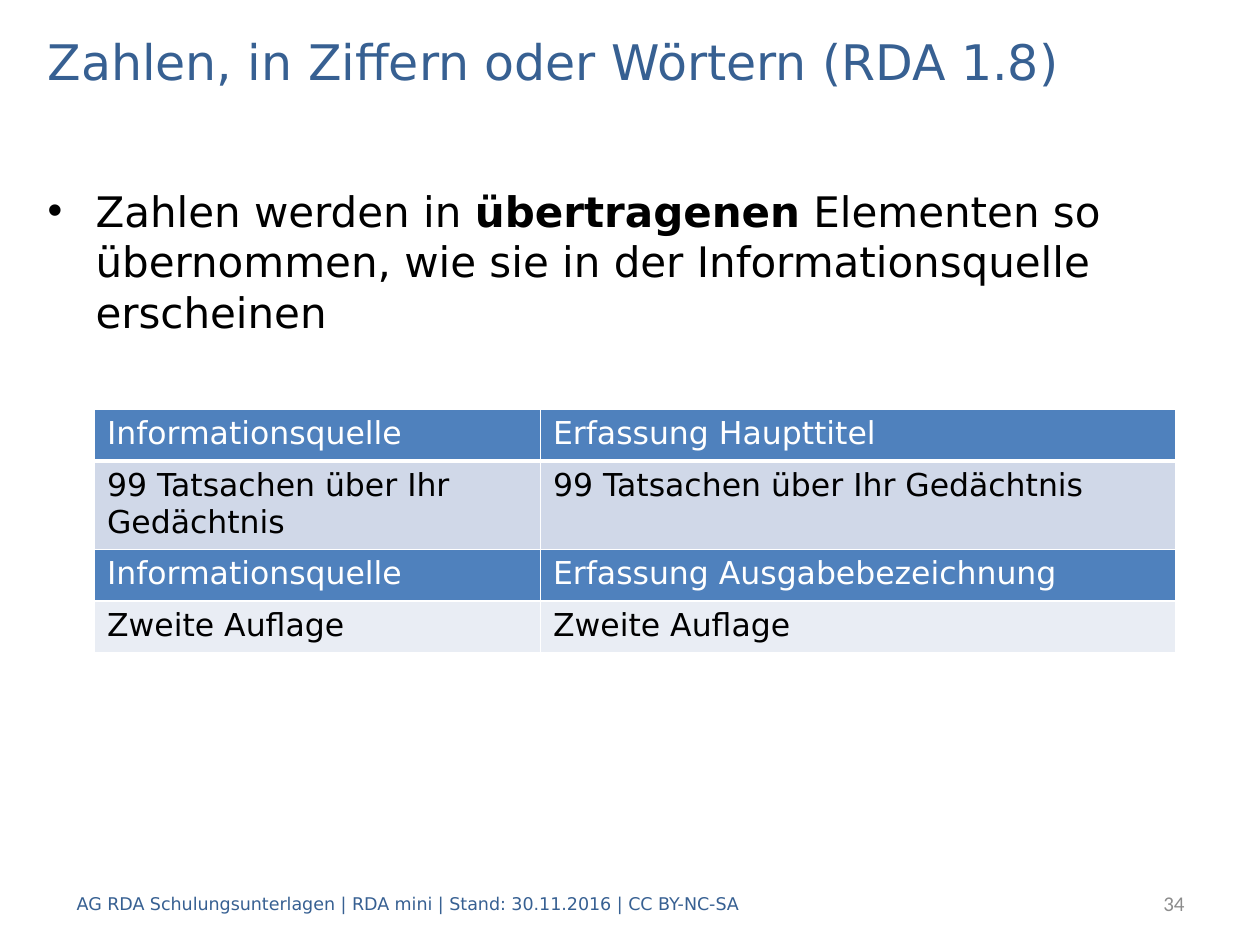
from dataclasses import dataclass

from lxml import etree
from pptx import Presentation
from pptx.dml.color import RGBColor
from pptx.enum.text import MSO_ANCHOR, PP_ALIGN
from pptx.oxml.ns import qn
from pptx.util import Inches, Pt

LEFT, RIGHT = PP_ALIGN.LEFT, PP_ALIGN.RIGHT
TOP, MIDDLE = MSO_ANCHOR.TOP, MSO_ANCHOR.MIDDLE


@dataclass(frozen=True)
class Theme:
    font: str = "DejaVu Sans"
    number_font: str = "Calibri"
    heading: str = "376092"
    text: str = "000000"
    muted: str = "8C8C8C"
    white: str = "FFFFFF"
    header_fill: str = "4F81BD"
    band_dark: str = "D0D8E8"
    band_light: str = "E9EDF4"
    title_size: int = 28
    body_size: int = 24
    table_size: int = 18
    number_size: int = 12
    footer_size: int = 10


THEME = Theme()


def format_run(run, size, color, font=THEME.font, bold=False):
    run.font.name = font
    run.font.size = Pt(size)
    run.font.bold = bold
    run.font.color.rgb = RGBColor.from_string(color)


def add_text_frame(slide, box, anchor):
    text_frame = slide.shapes.add_textbox(*map(Inches, box)).text_frame
    text_frame.word_wrap = True
    text_frame.vertical_anchor = anchor
    return text_frame


def add_line(slide, box, text, size, color, font=THEME.font, alignment=LEFT):
    text_frame = add_text_frame(slide, box, MIDDLE)
    text_frame.text = text
    paragraph = text_frame.paragraphs[0]
    paragraph.alignment = alignment
    format_run(paragraph.runs[0], size, color, font)


def add_title(slide, box):
    add_line(slide, box, "Zahlen, in Ziffern oder Wörtern (RDA 1.8)",
             THEME.title_size, THEME.heading)


def add_body(slide, box):
    text_frame = add_text_frame(slide, box, TOP)
    text_frame.margin_top = Inches(0.55)
    paragraph = text_frame.paragraphs[0]
    parts = [
        ("Zahlen werden in ", False),
        ("übertragenen", True),
        (" Elementen so übernommen, wie sie in der Informationsquelle erscheinen", False),
    ]
    for text, bold in parts:
        run = paragraph.add_run()
        run.text = text
        format_run(run, THEME.body_size, THEME.text, bold=bold)
    properties = paragraph._p.get_or_add_pPr()
    properties.set("marL", str(Inches(0.38)))
    properties.set("indent", str(-Inches(0.38)))
    etree.SubElement(properties, qn("a:buFont"), typeface="Arial")
    etree.SubElement(properties, qn("a:buChar"), char="•")


def set_borders(cell, top, bottom):
    properties = cell._tc.get_or_add_tcPr()
    for side, width in (("L", 1), ("R", 1), ("T", top), ("B", bottom)):
        line = etree.SubElement(properties, qn(f"a:ln{side}"), w=str(Pt(width)))
        fill = etree.SubElement(line, qn("a:solidFill"))
        etree.SubElement(fill, qn("a:srgbClr"), val=THEME.white)


def add_examples(slide, box):
    rows = [
        (("Informationsquelle", "Erfassung Haupttitel"), THEME.header_fill, THEME.white),
        (("99 Tatsachen über Ihr Gedächtnis",) * 2, THEME.band_dark, THEME.text),
        (("Informationsquelle", "Erfassung Ausgabebezeichnung"), THEME.header_fill, THEME.white),
        (("Zweite Auflage",) * 2, THEME.band_light, THEME.text),
    ]
    table = slide.shapes.add_table(len(rows), 2, *map(Inches, box)).table
    table.first_row = False
    table.horz_banding = False
    for column, width in zip(table.columns, (3.54, 5.04)):
        column.width = Inches(width)
    for row, height in zip(table.rows, (0.41, 0.69, 0.41, 0.41)):
        row.height = Inches(height)
    for row_index, (texts, fill, color) in enumerate(rows):
        top = 3 if row_index == 1 else 1
        bottom = 3 if row_index == 0 else 1
        for column_index, text in enumerate(texts):
            cell = table.cell(row_index, column_index)
            set_borders(cell, top, bottom)
            cell.fill.solid()
            cell.fill.fore_color.rgb = RGBColor.from_string(fill)
            cell.text_frame.text = text
            format_run(cell.text_frame.paragraphs[0].runs[0], THEME.table_size, color)


def add_footer(slide, box):
    left, top, width, height = box
    number_width = 1.59
    add_line(slide, (left, top, 8.35, height),
             "AG RDA Schulungsunterlagen | RDA mini | Stand: 30.11.2016 | CC BY-NC-SA",
             THEME.footer_size, THEME.heading)
    add_line(slide, (left + width - number_width, top, number_width, height), "34",
             THEME.number_size, THEME.muted, THEME.number_font, RIGHT)


def main():
    presentation = Presentation()
    presentation.slide_width = Inches(10)
    presentation.slide_height = Inches(7.5)
    slide = presentation.slides.add_slide(presentation.slide_layouts[6])
    add_title(slide, (0.28, 0.2, 9.45, 0.56))
    add_body(slide, (0.28, 0.92, 9.45, 5.98))
    add_footer(slide, (0.51, 6.97, 8.99, 0.4))
    add_examples(slide, (0.75, 3.25, 8.58, 1.92))
    presentation.save("out.pptx")


if __name__ == "__main__":
    main()
